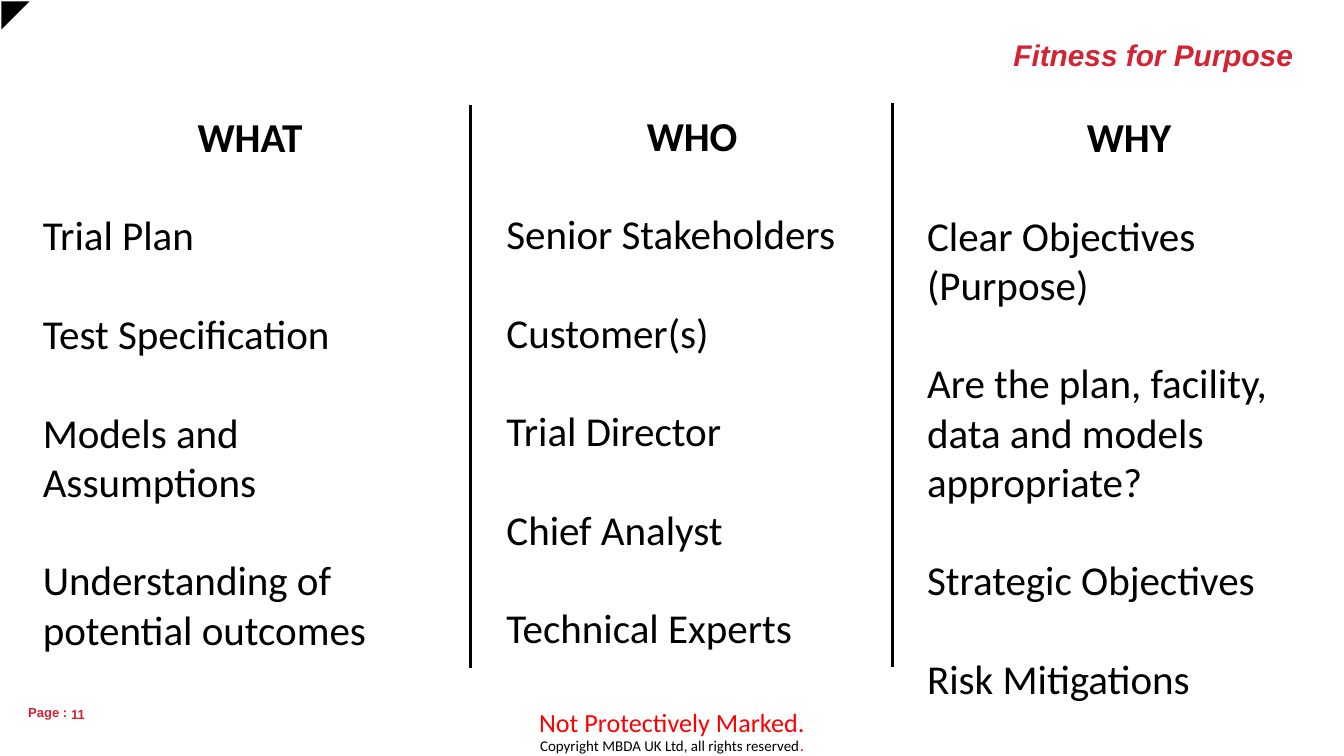
from lxml import etree
from pptx import Presentation
from pptx.dml.color import RGBColor
from pptx.enum.shapes import MSO_CONNECTOR, MSO_SHAPE
from pptx.enum.text import MSO_ANCHOR, PP_ALIGN
from pptx.oxml.ns import qn
from pptx.util import Inches, Pt

BLACK = RGBColor(0x00, 0x00, 0x00)
RED = RGBColor(0xFF, 0x00, 0x00)
CRIMSON = RGBColor(0xD2, 0x24, 0x32)

prs = Presentation()
prs.slide_width = Inches(10)
prs.slide_height = Inches(10) * 9 // 16
slide = prs.slides.add_slide(prs.slide_layouts[6])


def add_text(left, top, width, height, lines, size, color, font="Calibri",
             bold=False, align=PP_ALIGN.LEFT, wrap=True):
    frame = slide.shapes.add_textbox(
        Inches(left), Inches(top), Inches(width), Inches(height)).text_frame
    frame.word_wrap = wrap
    frame.text = "\n".join(lines)
    for paragraph in frame.paragraphs:
        paragraph.alignment = align
        for run in paragraph.runs:
            run.font.name = font
            run.font.size = Pt(size)
            run.font.bold = bold
            run.font.color.rgb = color
    return frame


add_text(0, 5.21, 10, 0.34, ["Not Protectively Marked."], 14, RED,
         align=PP_ALIGN.CENTER)

copyright_line = add_text(0.04, 5.42, 9.92, 0.25,
                          ["Copyright MBDA UK Ltd, all rights reserved"],
                          8, BLACK, align=PP_ALIGN.CENTER)
full_stop = copyright_line.paragraphs[0].add_run()
full_stop.text = "."
full_stop.font.name = "Calibri"
full_stop.font.size = Pt(9)
full_stop.font.color.rgb = RED

page_label = add_text(0.21, 5.24, 0.29, 0.12, ["Page :"], 7, CRIMSON,
                      "Arial", True, wrap=False)
page_number = add_text(0.53, 5.22, 0.2, 0.19, ["11"], 7, CRIMSON,
                       "Arial", True, wrap=False)
page_number.vertical_anchor = MSO_ANCHOR.MIDDLE
for frame in (page_label, page_number):
    frame.margin_left = frame.margin_right = 0
    frame.margin_top = frame.margin_bottom = 0

title = add_text(1.4, 0.09, 8.32, 0.63, ["Fitness for Purpose"], 16, CRIMSON,
                 "Arial", True, PP_ALIGN.RIGHT)
title.vertical_anchor = MSO_ANCHOR.MIDDLE
title.paragraphs[0].runs[0].font.italic = True

corner = slide.shapes.add_shape(MSO_SHAPE.RIGHT_TRIANGLE, Inches(0.01),
                                Inches(0.01), Inches(0.21), Inches(0.21))
corner.rotation = 90
corner.shadow.inherit = False
corner.fill.solid()
corner.fill.fore_color.rgb = BLACK
corner.line.fill.background()

columns = [
    (3.67, 0.77, 2.96, 4.54, "WHO",
     ["Senior Stakeholders", "Customer(s)", "Trial Director",
      "Chief Analyst", "Technical Experts"]),
    (0.22, 0.78, 3.28, 4.17, "WHAT",
     ["Trial Plan", "Test Specification", "Models and Assumptions",
      "Understanding of potential outcomes"]),
    (6.8, 0.78, 3.2, 4.91, "WHY",
     ["Clear Objectives (Purpose)",
      "Are the plan, facility, data and models appropriate?",
      "Strategic Objectives", "Risk Mitigations"]),
]
for left, top, width, height, heading, points in columns:
    column = add_text(left, top, width, height, [heading] + points, 22, BLACK)
    column.paragraphs[0].alignment = PP_ALIGN.CENTER
    column.paragraphs[0].runs[0].font.bold = True
    for paragraph in column.paragraphs[1:]:
        paragraph.space_before = Pt(26.4)

for x, top in ((3.5, 0.78), (6.64, 0.77)):
    divider = slide.shapes.add_connector(
        MSO_CONNECTOR.STRAIGHT, Inches(x), Inches(top),
        Inches(x), Inches(top + 4.19))
    divider.line.color.rgb = BLACK
    divider.line.width = Pt(1.5)
    etree.SubElement(divider._element.spPr, qn("a:effectLst"))

prs.save("out.pptx")
